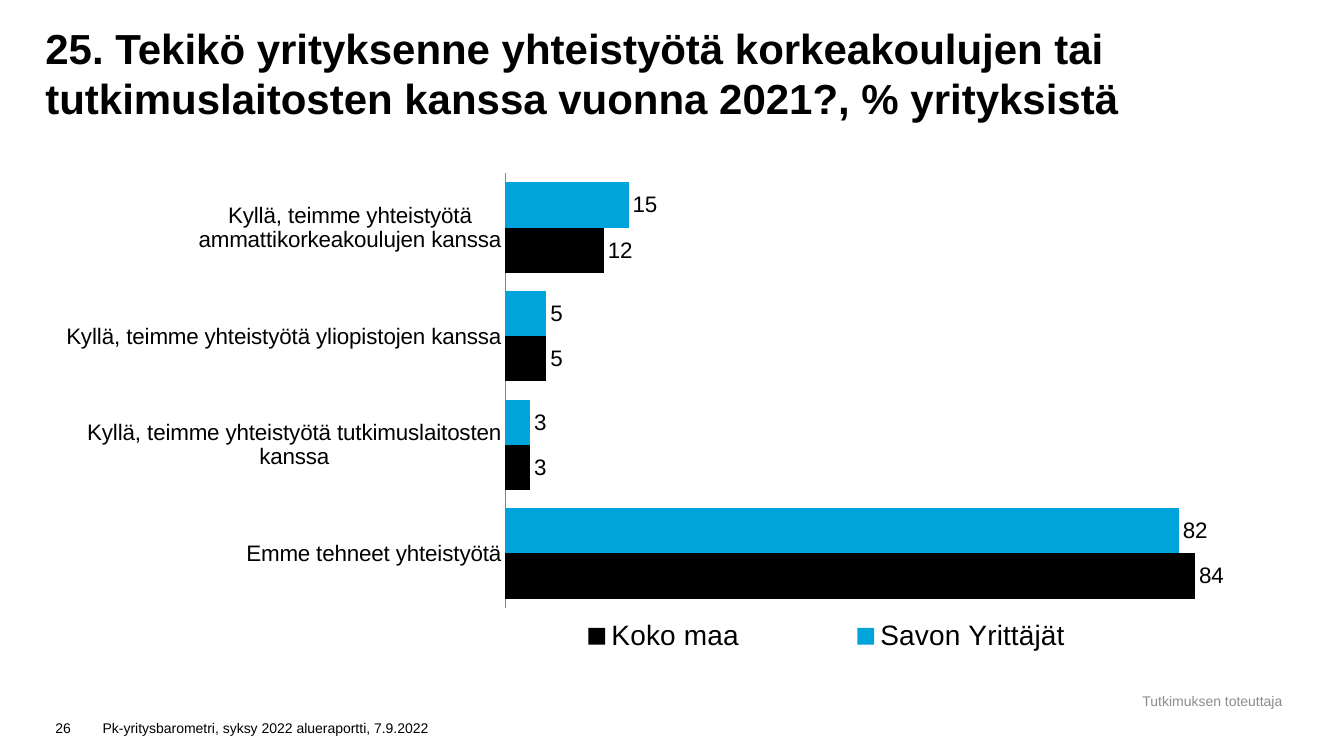
import pptx
import pptx.chart.data
import pptx.dml.color
import pptx.enum.chart
import pptx.enum.text
import pptx.oxml
import pptx.oxml.ns
import pptx.util
from pptx.util import Inches

COLORS = {"text": "000000", "credit": "8C8C8C", "axis": "868686",
          "region": "00A3DA", "country": "000000"}
FONT = "Arial"
CATEGORIES = [
    "Kyllä, teimme yhteistyötä ammattikorkeakoulujen kanssa",
    "Kyllä, teimme yhteistyötä yliopistojen kanssa",
    "Kyllä, teimme yhteistyötä tutkimuslaitosten kanssa",
    "Emme tehneet yhteistyötä",
]
SERIES = [
    ("Savon Yrittäjät", (15, 5, 3, 82), "region"),
    ("Koko maa", (12, 5, 3, 84), "country"),
]


def rgb(name):
    return pptx.dml.color.RGBColor.from_string(COLORS[name])


def style_font(font, size, color="text", bold=False):
    font.name = FONT
    font.size = pptx.util.Pt(size)
    font.bold = bold
    font.color.rgb = rgb(color)


def add_text(slide, text, left, top, width, height, size=10, color="text",
             bold=False, anchor="BOTTOM", align="LEFT", inset=None):
    box = slide.shapes.add_textbox(Inches(left), Inches(top), Inches(width), Inches(height))
    frame = box.text_frame
    frame.word_wrap = True
    frame.vertical_anchor = pptx.enum.text.MSO_ANCHOR[anchor]
    if inset is not None:
        frame.margin_left = frame.margin_right = Inches(inset)
        frame.margin_top = frame.margin_bottom = Inches(inset)
    para = frame.paragraphs[0]
    para.alignment = pptx.enum.text.PP_ALIGN[align]
    span = para.add_run()
    span.text = text
    style_font(span.font, size, color, bold)


def layout_xml(x, y, width, height, inner=False):
    target = '<c:layoutTarget val="inner"/>' if inner else ""
    return pptx.oxml.parse_xml(
        f'<c:layout {pptx.oxml.ns.nsdecls("c")}><c:manualLayout>{target}'
        '<c:xMode val="edge"/><c:yMode val="edge"/>'
        f'<c:x val="{x}"/><c:y val="{y}"/><c:w val="{width}"/><c:h val="{height}"/>'
        '</c:manualLayout></c:layout>')


def set_layout(parent, layout, index):
    for old in parent.findall(pptx.oxml.ns.qn("c:layout")):
        parent.remove(old)
    parent.insert(index, layout)


def style_axes(chart):
    category_axis = chart.category_axis
    category_axis.reverse_order = True
    category_axis.major_tick_mark = pptx.enum.chart.XL_TICK_MARK.NONE
    category_axis.format.line.color.rgb = rgb("axis")
    category_axis.format.line.width = pptx.util.Pt(0.75)
    style_font(category_axis.tick_labels.font, 16)
    value_axis = chart.value_axis
    value_axis.minimum_scale = 0
    value_axis.maximum_scale = 90
    value_axis.has_major_gridlines = False
    value_axis.visible = False


def style_series(series, color):
    series.format.fill.solid()
    series.format.fill.fore_color.rgb = rgb(color)
    series.invert_if_negative = False
    labels = series.data_labels
    labels.show_value = True
    labels.number_format = "#,##0"
    labels.number_format_is_linked = False
    labels.position = pptx.enum.chart.XL_LABEL_POSITION.OUTSIDE_END
    style_font(labels.font, 16)


def add_bar_chart(slide, left, top, width, height):
    data = pptx.chart.data.CategoryChartData()
    data.categories = CATEGORIES
    for name, values, _ in SERIES:
        data.add_series(name, values)
    chart = slide.shapes.add_chart(
        pptx.enum.chart.XL_CHART_TYPE.BAR_CLUSTERED, Inches(left), Inches(top),
        Inches(width), Inches(height), data).chart
    style_font(chart.font, 20)
    chart.has_title = False
    style_axes(chart)
    plot = chart.plots[0]
    plot.gap_width = 40
    plot.overlap = 0
    plot.vary_by_categories = False
    for series, (_, _, color) in zip(plot.series, SERIES):
        style_series(series, color)
    chart.has_legend = True
    legend = chart.legend
    legend.position = pptx.enum.chart.XL_LEGEND_POSITION.RIGHT
    legend.include_in_layout = False
    style_font(legend.font, 20)
    legend_xml = chart.element.find(".//" + pptx.oxml.ns.qn("c:legend"))
    set_layout(legend_xml, layout_xml(0.35, 0.88, 0.56, 0.1), 1)
    plot_xml = chart.element.find(".//" + pptx.oxml.ns.qn("c:plotArea"))
    set_layout(plot_xml, layout_xml(0.371, 0.033, 0.596, 0.842, inner=True), 0)


def main():
    deck = pptx.Presentation()
    deck.slide_width = Inches(13.33)
    deck.slide_height = Inches(7.5)
    slide = deck.slides.add_slide(deck.slide_layouts[6])
    add_text(slide, "Tutkimuksen toteuttaja", 11.16, 6.82, 1.73, 0.26,
             color="credit", anchor="MIDDLE", align="CENTER")
    add_text(slide, "Pk-yritysbarometri, syksy 2022 alueraportti, 7.9.2022", 0.92, 7, 4.17, 0.35)
    add_text(slide, "26", 0.45, 7, 0.47, 0.35)
    add_text(slide, "25. Tekikö yrityksenne yhteistyötä korkeakoulujen tai tutkimuslaitosten "
             "kanssa vuonna 2021?, % yrityksistä", 0.45, 0, 12.3, 1.22,
             size=30, bold=True, inset=0)
    add_bar_chart(slide, 0.45, 1.55, 12.3, 5.12)
    deck.save("out.pptx")


if __name__ == "__main__":
    main()
